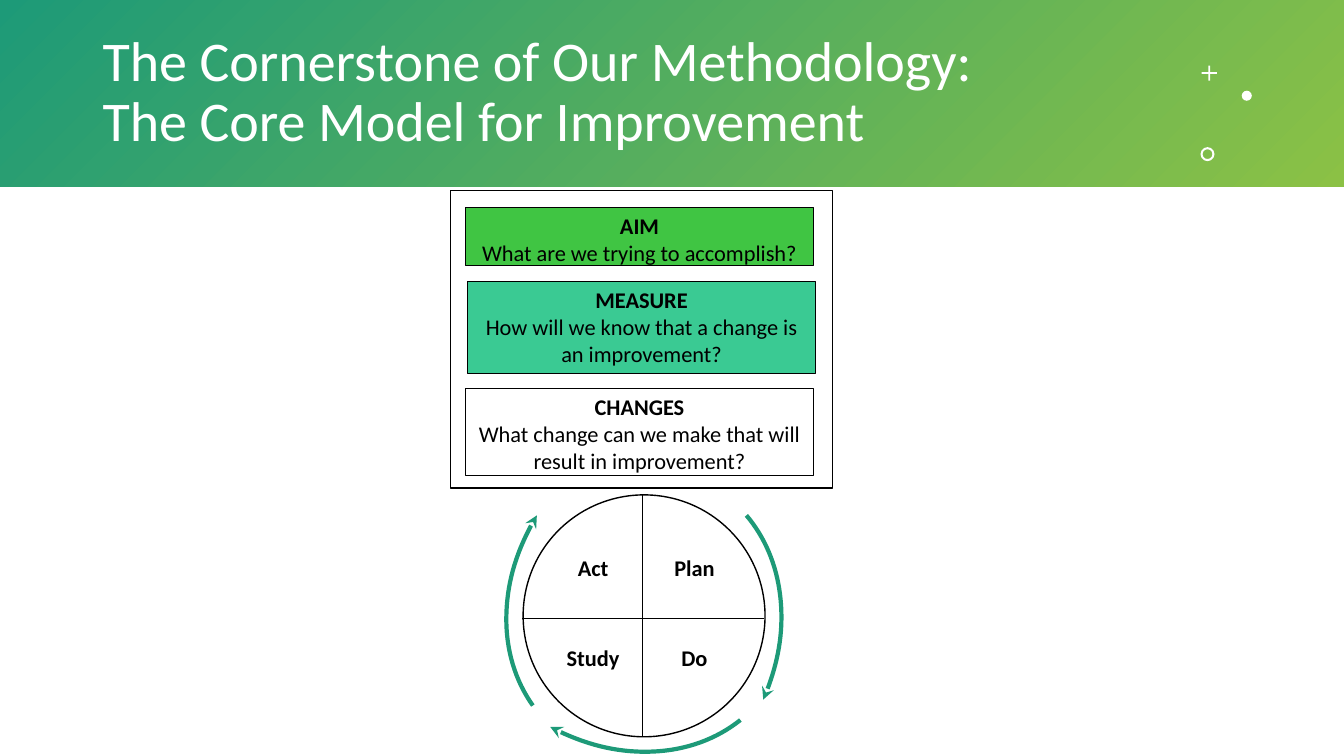
from lxml.etree import SubElement
from pptx import Presentation
from pptx.dml.color import RGBColor
from pptx.enum.shapes import MSO_CONNECTOR, MSO_SHAPE
from pptx.enum.text import MSO_ANCHOR, PP_ALIGN
from pptx.oxml.ns import qn
from pptx.util import Pt

WHITE = RGBColor(0xFF, 0xFF, 0xFF)
BLACK = RGBColor(0x00, 0x00, 0x00)
TEAL = RGBColor(0x1D, 0x9A, 0x78)
LIME = RGBColor(0x8B, 0xC1, 0x45)
GREEN = RGBColor(0x40, 0xC5, 0x43)
MINT = RGBColor(0x3A, 0xCA, 0x93)


def add_shape(s, kind, x, y, w, h, fill=None, line=None, width=1):
    sp = s.shapes.add_shape(kind, Pt(x), Pt(y), Pt(w), Pt(h))
    sp.shadow.inherit = False
    if fill is None:
        sp.fill.background()
    else:
        sp.fill.solid()
        sp.fill.fore_color.rgb = fill
    if line is None:
        sp.line.fill.background()
    else:
        sp.line.color.rgb = line
        sp.line.width = Pt(width)
    return sp


def set_font(p, size, color, bold=False):
    p.font.name = "Calibri"
    p.font.size = Pt(size)
    p.font.bold = bold
    p.font.color.rgb = color


def add_banner(s):
    sp = add_shape(s, MSO_SHAPE.RECTANGLE, 0, 0, 960, 133.2, TEAL)
    sp.fill.gradient()
    sp.fill.gradient_angle = 315
    for stop, color, position in zip(sp.fill.gradient_stops, (TEAL, LIME), (0, 1)):
        stop.color.rgb = color
        stop.position = position


def add_title(s, text):
    tf = s.shapes.add_textbox(Pt(66.2), Pt(23.8), Pt(774), Pt(85.7)).text_frame
    tf.word_wrap = True
    tf.vertical_anchor = MSO_ANCHOR.MIDDLE
    p = tf.paragraphs[0]
    p.text = text
    p.line_spacing = 0.9
    p.space_after = Pt(6)
    set_font(p, 40, WHITE)


def add_ornaments(s):
    plus = add_shape(s, MSO_SHAPE.CROSS, 858.4, 46.8, 10.8, 10.8, WHITE)
    plus.adjustments[0] = 0.44
    add_shape(s, MSO_SHAPE.OVAL, 887, 64.8, 7.2, 7.2, WHITE)
    ring = add_shape(s, MSO_SHAPE.DONUT, 857.5, 105.1, 10, 10, WHITE)
    ring.adjustments[0] = 0.15


def add_question(s, x, y, h, heading, question, fill):
    sp = add_shape(s, MSO_SHAPE.RECTANGLE, x, y, 248.4, h, fill, BLACK, 0.5)
    tf = sp.text_frame
    tf.word_wrap = True
    tf.vertical_anchor = MSO_ANCHOR.TOP
    tf.text = f"{heading}\n{question}"
    for p, bold in zip(tf.paragraphs, (True, False)):
        p.alignment = PP_ALIGN.CENTER
        set_font(p, 16, BLACK, bold)


def add_stage(s, x, y, text):
    sp = add_shape(s, MSO_SHAPE.RECTANGLE, x, y, 52.6, 34.6, WHITE)
    tf = sp.text_frame
    tf.word_wrap = False
    tf.vertical_anchor = MSO_ANCHOR.MIDDLE
    p = tf.paragraphs[0]
    p.text = text
    p.alignment = PP_ALIGN.CENTER
    set_font(p, 16, BLACK, True)


def add_arc(s, x, y, rotation, start):
    sp = add_shape(s, MSO_SHAPE.ARC, x, y, 249.8, 313.9, None, TEAL, 3)
    sp.adjustments[0] = start
    sp.adjustments[1] = 195.08
    sp.rotation = rotation
    SubElement(sp.line._get_or_add_ln(), qn("a:tailEnd"), type="stealth")


def add_line(s, x1, y1, x2, y2):
    c = s.shapes.add_connector(MSO_CONNECTOR.STRAIGHT, Pt(x1), Pt(y1), Pt(x2), Pt(y2))
    c.line.color.rgb = BLACK
    c.line.width = Pt(0.5)
    SubElement(c._element.spPr, qn("a:effectLst"))


def main():
    prs = Presentation()
    prs.slide_width, prs.slide_height = Pt(960), Pt(540)
    s = prs.slides.add_slide(prs.slide_layouts[6])

    add_banner(s)
    add_title(s, "The Cornerstone of Our Methodology:\vThe Core Model for Improvement")
    add_ornaments(s)

    add_shape(s, MSO_SHAPE.RECTANGLE, 321.8, 136.1, 272.9, 212.4, None, BLACK)
    for question in (
        (332.6, 147.9, 41.8, "AIM", "What are we trying to accomplish?", GREEN),
        (334.1, 200.9, 65.5, "MEASURE",
         "How will we know that a change is an improvement?", MINT),
        (332.6, 277.6, 61.9, "CHANGES",
         "What change can we make that will result in improvement?", None),
    ):
        add_question(s, *question)

    for arc in (
        (383.8, 256.3, 234.7, 162),
        (290.2, 314.6, 47.1, 163.01),
        (306, 234.7, 141.4, 162),
    ):
        add_arc(s, *arc)

    add_shape(s, MSO_SHAPE.OVAL, 373.7, 353.5, 172.8, 172.8, None, BLACK)
    for y, row in ((388.1, ("Act", "Plan")), (452.2, ("Study", "Do"))):
        for x, stage in zip((397.4, 469.8), row):
            add_stage(s, x, y, stage)
    add_line(s, 458.6, 353.5, 458.6, 526.3)
    add_line(s, 545.8, 441.4, 373, 441.4)

    prs.save("out.pptx")


if __name__ == "__main__":
    main()
